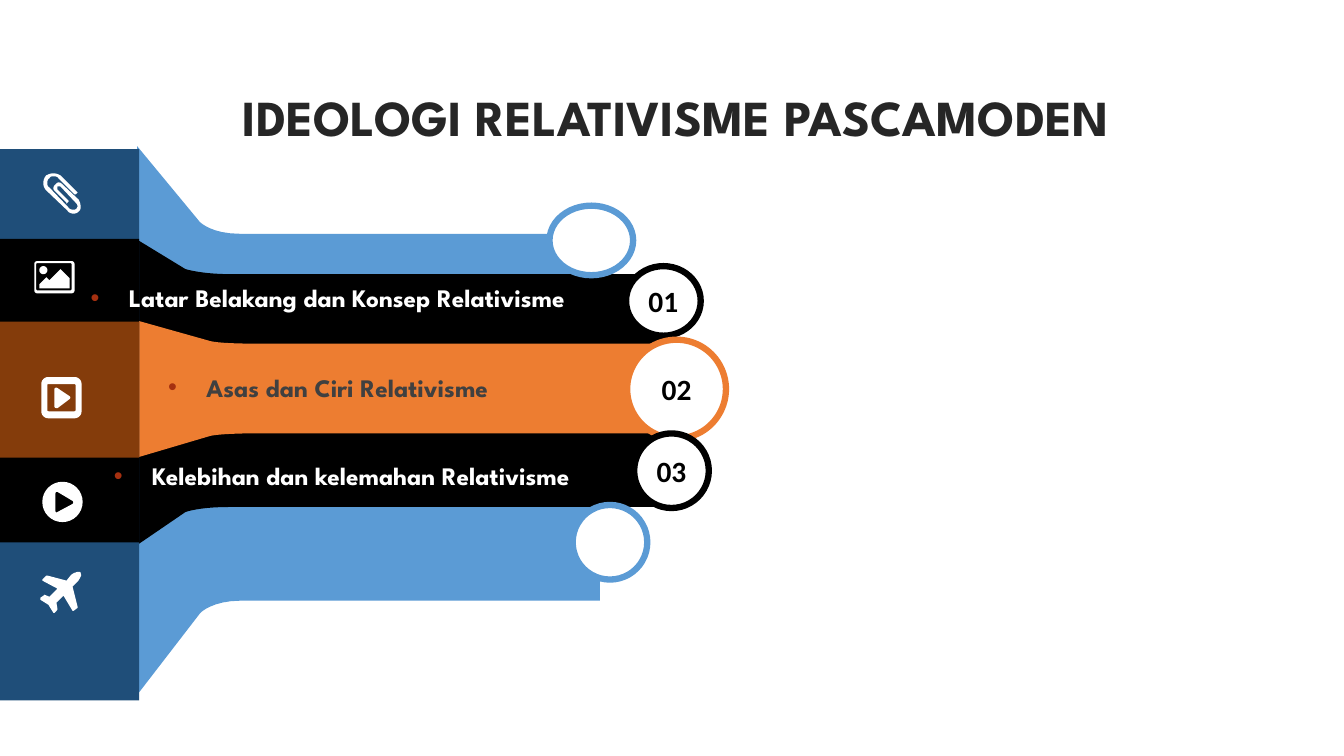
from dataclasses import dataclass
from math import cos, pi, sin

from lxml.etree import SubElement
from pptx import Presentation
from pptx.dml.color import RGBColor
from pptx.enum.shapes import MSO_SHAPE as Preset
from pptx.enum.text import MSO_ANCHOR as Anchor, MSO_AUTO_SIZE as AutoSize, PP_ALIGN as Align
from pptx.oxml.ns import qn
from pptx.util import Inches, Pt

BLUE, NAVY, ORANGE, BROWN = "5B9BD5", "1F4E79", "ED7D31", "843C0B"
BLACK, WHITE, RUST, CHARCOAL, GREY = "000000", "FFFFFF", "A53010", "262626", "404040"
HEADING_FONT, NUMBER_FONT = "League Spartan", "Calibri"

# A step is a line (x, y) or a cubic curve (x1, y1, x2, y2, x, y), in inches
Contour = list[tuple[float, ...]]


@dataclass
class Outline:
    color: str
    contours: list[Contour]


@dataclass
class Block:
    top: float
    height: float
    color: str


@dataclass
class Badge:
    left: float
    top: float
    width: float
    height: float
    color: str
    number: str = ""


@dataclass
class Topic:
    left: float
    top: float
    width: float
    text: str
    color: str


def rgb(color: str) -> RGBColor:
    return RGBColor.from_string(color)


def flatten(contour: Contour, parts: int = 8) -> list[tuple[int, int]]:
    points = [contour[0]]
    for step in contour[1:]:
        if len(step) == 2:
            points.append(step)
            continue
        x0, y0 = points[-1]
        x1, y1, x2, y2, x3, y3 = step
        for t in (i / parts for i in range(1, parts + 1)):
            a, b, c, d = (1 - t) ** 3, 3 * t * (1 - t) ** 2, 3 * t * t * (1 - t), t ** 3
            points.append((a * x0 + b * x1 + c * x2 + d * x3,
                           a * y0 + b * y1 + c * y2 + d * y3))
    return [(Inches(x), Inches(y)) for x, y in points]


def arc(x: float, y: float, radius: float, start: float = 0, sweep: float = 2 * pi,
        parts: int = 32) -> Contour:
    angles = [start + sweep * i / parts for i in range(parts + 1)]
    return [(x + radius * cos(a), y + radius * sin(a)) for a in angles]


def rounded_box(left: float, top: float, right: float, bottom: float, radius: float) -> Contour:
    centres = [(right - radius, bottom - radius), (left + radius, bottom - radius),
               (left + radius, top + radius), (right - radius, top + radius)]
    return [point for turn, (x, y) in enumerate(centres)
            for point in arc(x, y, radius, turn * pi / 2, pi / 2, 6)]


def paint(shape, color: str) -> None:
    shape.shadow.inherit = False
    shape.fill.solid()
    shape.fill.fore_color.rgb = rgb(color)
    shape.line.fill.background()


def format_text(frame, size: float, font: str, color: str) -> None:
    frame.vertical_anchor = Anchor.MIDDLE
    style = frame.paragraphs[0].runs[0].font
    style.size, style.name, style.bold = Pt(size), font, True
    style.color.rgb = rgb(color)


def draw_outline(slide, outline: Outline) -> None:
    first, *others = [flatten(contour) for contour in outline.contours]
    builder = slide.shapes.build_freeform(*first[0])
    builder.add_line_segments(first[1:])
    for points in others:
        builder.move_to(*points[0])
        builder.add_line_segments(points[1:])
    paint(builder.convert_to_shape(), outline.color)


def draw_block(slide, block: Block) -> None:
    paint(slide.shapes.add_shape(Preset.RECTANGLE, 0, Inches(block.top),
                                 Inches(1.38), Inches(block.height)), block.color)


def draw_badge(slide, badge: Badge) -> None:
    circle = slide.shapes.add_shape(Preset.OVAL, Inches(badge.left), Inches(badge.top),
                                    Inches(badge.width), Inches(badge.height))
    paint(circle, WHITE)
    circle.line.color.rgb = rgb(badge.color)
    circle.line.width = Pt(4.5)
    if badge.number:
        frame = circle.text_frame
        frame.margin_left = frame.margin_right = Inches(0.03)
        frame.margin_top = frame.margin_bottom = Inches(0.03)
        frame.text = badge.number
        frame.paragraphs[0].alignment = Align.CENTER
        format_text(frame, 21, NUMBER_FONT, BLACK)


def draw_topic(slide, topic: Topic) -> None:
    frame = slide.shapes.add_textbox(Inches(topic.left), Inches(topic.top),
                                     Inches(topic.width), Inches(0.4)).text_frame
    frame.word_wrap = False
    frame.auto_size = AutoSize.SHAPE_TO_FIT_TEXT
    frame.text = topic.text
    format_text(frame, 18, HEADING_FONT, topic.color)
    paragraph = frame.paragraphs[0]
    paragraph.space_before = Pt(10)
    properties = paragraph._p.get_or_add_pPr()
    properties.set("marL", str(Inches(0.38)))
    properties.set("indent", str(-Inches(0.38)))
    SubElement(SubElement(properties, qn("a:buClr")), qn("a:srgbClr"), val=RUST)
    SubElement(properties, qn("a:buFont"), typeface="Arial")
    SubElement(properties, qn("a:buChar"), char="•")


RIBBONS = [
    Outline(BLUE, [[(5.95, 2.32), (2.38, 2.32), (2.1, 2.32, 1.99, 2.21, 1.98, 2.2), (1.36, 1.45),
                    (1.34, 6.92), (1.98, 6.09), (1.99, 6.07, 2.12, 5.96, 2.38, 5.96),
                    (5.95, 5.96)]]),
    Outline(BLACK, [[(6.66, 2.72), (2.28, 2.72), (2.06, 2.72, 1.91, 2.69, 1.84, 2.67),
                     (1.02, 2.17), (1.02, 5.64), (1.84, 5.08),
                     (1.9, 5.06, 2.03, 5.03, 2.28, 5.03), (6.66, 5.03)]]),
    Outline(ORANGE, [[(6.65, 3.41), (2.55, 3.41), (2.13, 3.41, 2.07, 3.38, 2.07, 3.38),
                      (1.36, 3.18), (1.36, 4.54), (2.07, 4.33),
                      (2.07, 4.33, 2.13, 4.3, 2.55, 4.3), (6.65, 4.3)]]),
]
BLOCKS = [Block(1.48, 5.47, NAVY), Block(2.37, 3.01, BLACK), Block(3.19, 1.35, BROWN)]
BADGES = [
    Badge(5.45, 2.04, 0.83, 0.69, BLUE),
    Badge(6.21, 2.64, 0.74, 0.69, BLACK, "01"),
    Badge(6.22, 3.37, 0.98, 0.98, ORANGE, "02"),
    Badge(6.29, 4.3, 0.74, 0.74, BLACK, "03"),
    Badge(5.68, 5.01, 0.74, 0.74, BLUE),
]
TOPICS = [
    Topic(0.8, 2.75, 5.69, "Latar Belakang dan Konsep Relativisme", WHITE),
    Topic(1.57, 3.64, 3.63, "Asas dan Ciri Relativisme", GREY),
    Topic(1.03, 4.52, 5.29, "Kelebihan dan kelemahan Relativisme", WHITE),
]

PAPERCLIP = [
    (0.78, 1.98), (0.62, 1.83), (0.61, 1.82, 0.6, 1.81, 0.58, 1.81),
    (0.57, 1.81, 0.56, 1.82, 0.55, 1.83), (0.54, 1.84, 0.53, 1.85, 0.53, 1.87),
    (0.53, 1.88, 0.54, 1.89, 0.55, 1.9), (0.66, 2.01), (0.66, 2.02), (0.68, 2), (0.68, 1.99),
    (0.57, 1.88), (0.57, 1.85), (0.58, 1.85), (0.6, 1.85), (0.75, 2.01),
    (0.76, 2.02, 0.77, 2.03, 0.77, 2.05), (0.76, 2.07), (0.75, 2.08, 0.74, 2.08, 0.73, 2.08),
    (0.72, 2.08, 0.7, 2.08, 0.69, 2.07), (0.49, 1.86), (0.47, 1.85, 0.47, 1.83, 0.47, 1.82),
    (0.47, 1.8, 0.47, 1.78, 0.49, 1.77), (0.5, 1.75, 0.51, 1.75, 0.53, 1.75),
    (0.55, 1.75, 0.57, 1.75, 0.58, 1.77), (0.74, 1.93), (0.75, 1.93), (0.77, 1.91),
    (0.6, 1.74), (0.58, 1.73, 0.56, 1.72, 0.53, 1.72), (0.5, 1.72, 0.48, 1.73, 0.46, 1.74),
    (0.44, 1.76, 0.43, 1.79, 0.43, 1.82), (0.43, 1.84, 0.44, 1.87, 0.46, 1.89), (0.67, 2.09),
    (0.68, 2.11, 0.71, 2.12, 0.73, 2.12), (0.75, 2.12, 0.77, 2.11, 0.78, 2.1),
    (0.8, 2.08, 0.8, 2.07, 0.8, 2.05), (0.8, 2.02, 0.79, 2, 0.78, 1.98),
]
AIRPLANE = [
    (0.8, 5.72), (0.81, 5.71, 0.8, 5.69, 0.8, 5.68), (0.79, 5.67, 0.77, 5.67, 0.75, 5.68),
    (0.74, 5.68, 0.72, 5.69, 0.7, 5.71), (0.66, 5.76), (0.47, 5.71), (0.46, 5.71), (0.42, 5.75),
    (0.42, 5.76), (0.57, 5.84), (0.49, 5.92), (0.44, 5.9), (0.43, 5.91), (0.4, 5.93),
    (0.4, 5.95), (0.48, 6), (0.53, 6.08), (0.54, 6.08), (0.57, 6.05), (0.57, 6.04),
    (0.56, 5.98), (0.63, 5.91), (0.72, 6.06), (0.73, 6.06), (0.77, 6.03), (0.77, 6.02),
    (0.72, 5.82), (0.77, 5.77), (0.78, 5.76, 0.79, 5.74, 0.8, 5.72),
]
MOUNTAINS = [(0.49, 2.78), (0.46, 2.75), (0.39, 2.82), (0.39, 2.86), (0.69, 2.86),
             (0.69, 2.76), (0.6, 2.67), (0.49, 2.78)]
ROUND_PLAY = [(0.72, 5), (0.57, 5.08), (0.56, 5.09, 0.55, 5.08, 0.55, 5.07), (0.55, 4.9),
              (0.55, 4.88, 0.56, 4.88, 0.57, 4.88), (0.72, 4.97), (0.73, 4.98, 0.73, 4.99, 0.72, 5)]
SQUARE_PLAY = [(0.69, 3.93), (0.57, 3.85), (0.56, 3.84, 0.54, 3.85, 0.54, 3.86), (0.54, 4.03),
               (0.54, 4.05, 0.56, 4.05, 0.57, 4.05), (0.69, 3.96), (0.7, 3.95, 0.7, 3.94, 0.69, 3.93)]
ICONS = [Outline(WHITE, contours) for contours in (
    [PAPERCLIP],
    [rounded_box(0.34, 2.59, 0.74, 2.91, 0.03), rounded_box(0.36, 2.61, 0.71, 2.88, 0.01)],
    [arc(0.43, 2.68, 0.04)],
    [MOUNTAINS],
    [AIRPLANE],
    [arc(0.62, 4.98, 0.2), ROUND_PLAY],
    [rounded_box(0.41, 3.74, 0.81, 4.15, 0.07), rounded_box(0.47, 3.81, 0.75, 4.08, 0.01)],
    [SQUARE_PLAY],
)]


def main() -> None:
    deck = Presentation()
    deck.slide_width, deck.slide_height = Inches(13.33), Inches(7.5)
    slide = deck.slides.add_slide(deck.slide_layouts[6])

    # Title
    title = slide.shapes.add_textbox(Inches(0.42), Inches(0.55), Inches(12.57), Inches(1.2)).text_frame
    title.word_wrap = True
    title.text = "IDEOLOGI RELATIVISME PASCAMODEN"
    title.paragraphs[0].alignment = Align.CENTER
    format_text(title, 36, HEADING_FONT, CHARCOAL)

    # Ribbons, side blocks, badges, topics and icons, back to front
    for draw, items in ((draw_outline, RIBBONS), (draw_block, BLOCKS), (draw_badge, BADGES),
                        (draw_topic, TOPICS), (draw_outline, ICONS)):
        for item in items:
            draw(slide, item)

    deck.save("out.pptx")


if __name__ == "__main__":
    main()
